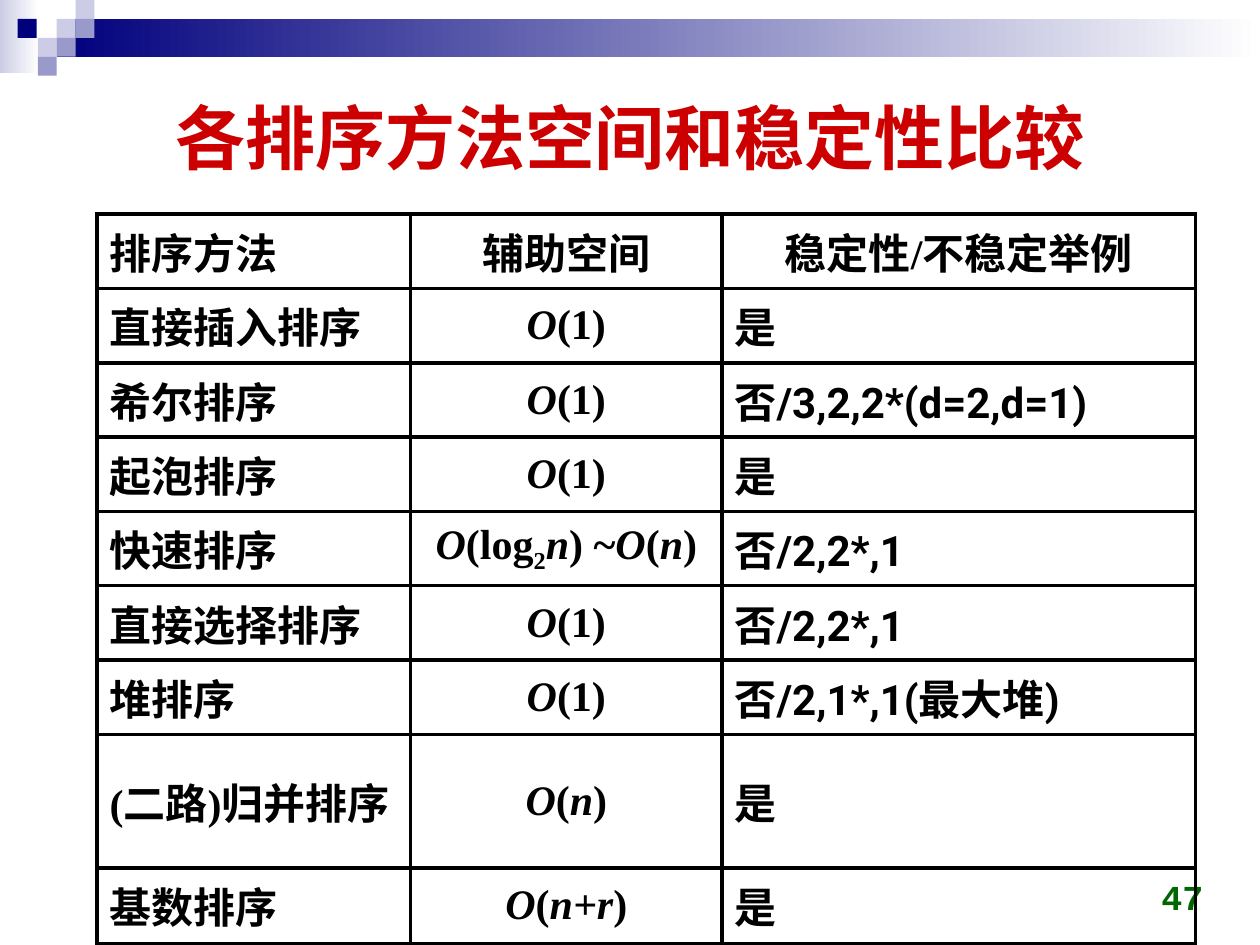
import pptx
import pptx.util
import pptx.dml.color
import pptx.enum.shapes
import pptx.enum.text
import pptx.oxml
import pptx.oxml.ns

Inches = pptx.util.Inches
Pt = pptx.util.Pt
RGBColor = pptx.dml.color.RGBColor
ALIGN = pptx.enum.text.PP_ALIGN
ANCHOR = pptx.enum.text.MSO_ANCHOR

NAVY = RGBColor(0x00, 0x00, 0x7D)
LAVENDER = RGBColor(0xCC, 0xCC, 0xE6)
PERIWINKLE = RGBColor(0x99, 0x99, 0xCC)
WHITE = RGBColor(0xFF, 0xFF, 0xFF)
BLACK = RGBColor(0x00, 0x00, 0x00)
RED = RGBColor(0xCC, 0x00, 0x00)
GREEN = RGBColor(0x00, 0x66, 0x00)

TITLE = "各排序方法空间和稳定性比较"
PAGE_NUMBER = "47"
CONSTANT = [("O", "italic"), ("(1)", "")]
LINEAR = [("O", "italic"), ("(", ""), ("n", "italic"), (")", "")]
LOGARITHMIC = [("O", "italic"), ("(log", ""), ("2", "subscript"), ("n", "italic"), (") ~", "")]
RADIX = [("O", "italic"), ("(", ""), ("n+r", "italic"), (")", "")]

HEADERS = ["排序方法", "辅助空间", "稳定性/不稳定举例"]
METHODS = [
    ("直接插入排序", CONSTANT, "是"),
    ("希尔排序", CONSTANT, "否/3,2,2*(d=2,d=1)"),
    ("起泡排序", CONSTANT, "是"),
    ("快速排序", LOGARITHMIC + LINEAR, "否/2,2*,1"),
    ("直接选择排序", CONSTANT, "否/2,2*,1"),
    ("堆排序", CONSTANT, "否/2,1*,1(最大堆)"),
    ("(二路)归并排序", LINEAR, "是"),
    ("基数排序", RADIX, "是"),
]
COLUMN_WIDTHS = [2.49, 2.47, 3.76]
ROW_HEIGHTS = [0.59] * 7 + [1.06, 0.6]
COLUMN_FORMATS = [("Times New Roman", ALIGN.LEFT), ("Times New Roman", ALIGN.CENTER), ("Roboto", ALIGN.LEFT)]
HEADER_FORMATS = [("Times New Roman", align) for align in (ALIGN.LEFT, ALIGN.CENTER, ALIGN.CENTER)]

BANDS = [((0, 0, 0.31, 0.58), LAVENDER), ((0.45, 0.15, 9.55, 0.3), NAVY)]
SQUARE = 0.15
SQUARES = [
    (0.45, 0.15, LAVENDER),
    (0.6, 0, LAVENDER),
    (0.6, 0.15, PERIWINKLE),
    (0.3, 0.3, LAVENDER),
    (0.14, 0.15, NAVY),
    (0.45, 0.3, PERIWINKLE),
    (0.3, 0.45, PERIWINKLE),
]


def add_rectangle(slide, box):
    shape = slide.shapes.add_shape(pptx.enum.shapes.MSO_SHAPE.RECTANGLE, *map(Inches, box))
    shape.shadow.inherit = False
    shape.line.fill.background()
    return shape


def add_decoration(slide):
    for box, color in BANDS:
        fill = add_rectangle(slide, box).fill
        fill.gradient()
        fill.gradient_angle = 0
        for stop, stop_color, position in zip(fill.gradient_stops, (color, WHITE), (0, 1)):
            stop.color.rgb = stop_color
            stop.position = position
    for left, top, color in SQUARES:
        fill = add_rectangle(slide, (left, top, SQUARE, SQUARE)).fill
        fill.solid()
        fill.fore_color.rgb = color


def write_runs(paragraph, runs, align, color, font_format):
    paragraph.alignment = align
    for text, style in runs:
        run = paragraph.add_run()
        run.text = text
        run.font.color.rgb = color
        for name, value in font_format.items():
            setattr(run.font, name, value)
        run.font.italic = style == "italic"
        if style == "subscript":
            run.font._element.set("baseline", "-25000")


def add_text(slide, box, text, anchor, align, color, font_format):
    frame = slide.shapes.add_textbox(*map(Inches, box)).text_frame
    frame.word_wrap = True
    frame.vertical_anchor = anchor
    write_runs(frame.paragraphs[0], [(text, "")], align, color, font_format)


def set_borders(cell):
    properties = cell._tc.get_or_add_tcPr()
    for index, side in enumerate(("lnL", "lnR", "lnT", "lnB")):
        properties.insert(index, pptx.oxml.parse_xml(
            f'<a:{side} {pptx.oxml.ns.nsdecls("a")} w="{Pt(2.25)}">'
            f'<a:solidFill><a:srgbClr val="{BLACK}"/></a:solidFill></a:{side}>'))


def add_comparison(slide):
    rows = [HEADERS] + METHODS
    box = (0.77, 1.7, sum(COLUMN_WIDTHS), sum(ROW_HEIGHTS))
    table = slide.shapes.add_table(len(rows), len(HEADERS), *map(Inches, box)).table
    table.first_row = False
    table.horz_banding = False
    for column, width in zip(table.columns, COLUMN_WIDTHS):
        column.width = Inches(width)
    for row_index, (row, height) in enumerate(zip(rows, ROW_HEIGHTS)):
        table.rows[row_index].height = Inches(height)
        formats = COLUMN_FORMATS if row_index else HEADER_FORMATS
        for column_index, (content, (font_name, align)) in enumerate(zip(row, formats)):
            cell = table.cell(row_index, column_index)
            cell.fill.background()
            cell.vertical_anchor = ANCHOR.MIDDLE
            runs = [(content, "")] if isinstance(content, str) else content
            font_format = {"name": font_name, "size": Pt(24), "bold": True}
            write_runs(cell.text_frame.paragraphs[0], runs, align, BLACK, font_format)
            set_borders(cell)


def main():
    presentation = pptx.Presentation()
    presentation.slide_width = Inches(10)
    presentation.slide_height = Inches(7.5)
    slide = presentation.slides.add_slide(presentation.slide_layouts[6])
    add_decoration(slide)
    add_text(slide, (0.5, 0.5, 9, 1.16), TITLE, ANCHOR.MIDDLE, ALIGN.CENTER, RED,
             {"name": "Arial", "size": Pt(40), "bold": True})
    add_text(slide, (7.32, 6.83, 2.33, 0.5), PAGE_NUMBER, ANCHOR.BOTTOM, ALIGN.RIGHT, GREEN,
             {"name": "Courier New", "size": Pt(20), "bold": True})
    add_comparison(slide)
    presentation.save("out.pptx")


if __name__ == "__main__":
    main()
